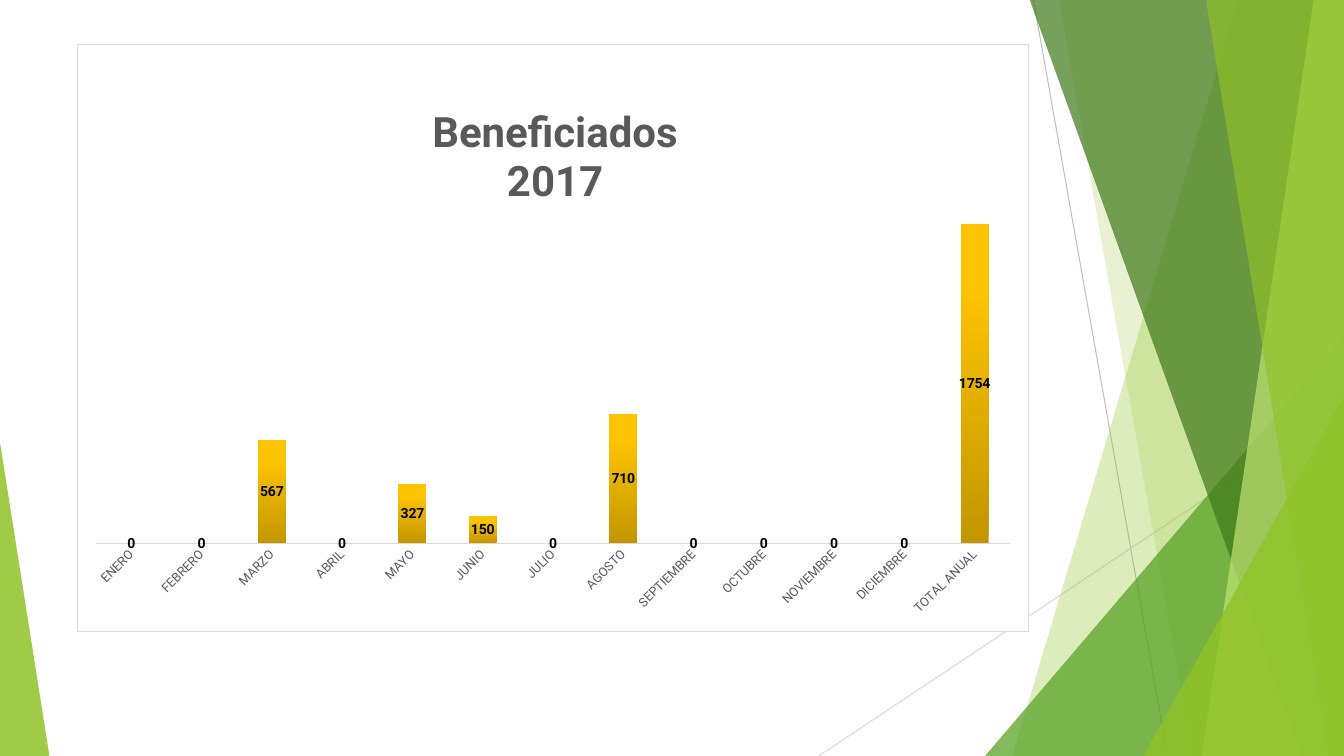
"""Slide with a monthly column chart of beneficiaries beside green facets."""
from dataclasses import dataclass

from lxml import etree
from pptx import Presentation
from pptx.chart.data import CategoryChartData
from pptx.dml.color import RGBColor
from pptx.enum.chart import XL_CHART_TYPE as ChartType, XL_LABEL_POSITION as LabelPosition, XL_TICK_MARK as TickMark
from pptx.enum.shapes import MSO_CONNECTOR as Connector, MSO_SHAPE as Preset
from pptx.oxml import parse_xml
from pptx.oxml.ns import nsdecls, qn
from pptx.util import Inches, Pt


@dataclass(frozen=True)
class Theme:
    font: str = "Roboto"
    lime: str = "90C226"
    green: str = "54A021"
    forest: str = "3F7819"
    pale: str = "C0E474"
    grey: str = "BFBFBF"
    border: str = "D9D9D9"
    white: str = "FFFFFF"
    text: str = "595959"
    label: str = "000000"
    bar_stops: tuple = ((0, "C29600"), (80, "FCC300"), (100, "FDC400"))
    title_size: int = 30
    label_size: int = 10
    axis_size: int = 9


theme = Theme()


def paint(shape, color, opacity):
    """Give a facet a translucent fill without line or shadow."""
    shape.shadow.inherit = False
    shape.fill.solid()
    shape.fill.fore_color.rgb = RGBColor.from_string(color)
    shape.line.fill.background()
    tint = shape.element.spPr.find(qn("a:solidFill"))[0]
    etree.SubElement(tint, qn("a:alpha")).set("val", str(opacity * 1000))


def style(font, size, color, bold=False):
    """Set typeface, size, colour and weight."""
    font.name = theme.font
    font.size = Pt(size)
    font.bold = bold
    font.color.rgb = RGBColor.from_string(color)


deck = Presentation()
deck.slide_width, deck.slide_height = Inches(13.33), Inches(7.5)
page = deck.slides.add_slide(deck.slide_layouts[6])
shapes = page.shapes

for x1, y1, x2, y2, color in (
    (10.25, 0, 11.58, 7.5, theme.grey),
    (13.33, 4.03, 8.12, 7.5, theme.border),
):
    ray = shapes.add_connector(Connector.STRAIGHT, Inches(x1), Inches(y1), Inches(x2), Inches(y2))
    ray.line.color.rgb = RGBColor.from_string(color)
    ray.line.width = Pt(0.75)
    etree.SubElement(ray.element.spPr, qn("a:effectLst"))

bands = [
    (12.28, 10.04, theme.lime, 30),
    (10.5, 11.83, theme.lime, 20),
    (10.21, 12.91, theme.forest, 70),
    (13.03, 11.92, theme.pale, 70),
    (11.96, 13.18, theme.lime, 65),
]
triangles = {
    2: (9.77, 3.33, 3.56, 1, theme.green, 72),
    5: (11.34, 3.93, 1.99, 1, theme.lime, 80),
    6: (0, 4.39, 0.49, 0, theme.lime, 85),
}
for order in range(len(bands) + len(triangles)):
    if order in triangles:
        left, top, width, apex, color, opacity = triangles[order]
        facet = shapes.add_shape(
            Preset.ISOSCELES_TRIANGLE, Inches(left), Inches(top), Inches(width), Inches(7.5 - top))
        facet.adjustments[0] = apex
        paint(facet, color, opacity)
    if order < len(bands):
        top_x, bottom_x, color, opacity = bands[order]
        outline = shapes.build_freeform(Inches(top_x), Inches(-0.01))
        outline.add_line_segments(
            [(Inches(x), Inches(y)) for x, y in ((13.33, -0.01), (13.33, 7.5), (bottom_x, 7.5))])
        paint(outline.convert_to_shape(), color, opacity)

data = CategoryChartData()
data.categories = [
    "ENERO", "FEBRERO", "MARZO", "ABRIL", "MAYO", "JUNIO", "JULIO", "AGOSTO",
    "SEPTIEMBRE", "OCTUBRE", "NOVIEMBRE", "DICIEMBRE", "TOTAL ANUAL",
]
data.add_series("Series 1", [0, 0, 567, 0, 327, 150, 0, 710, 0, 0, 0, 0, 1754])
chart = shapes.add_chart(
    ChartType.COLUMN_STACKED, Inches(0.76), Inches(0.44), Inches(9.45), Inches(5.83), data).chart
style(chart.font, theme.label_size, theme.label)
chart.has_legend = False
chart.has_title = True
title = chart.chart_title
title.include_in_layout = False
heading = title.text_frame
for number, words in enumerate(("Beneficiados", "2017")):
    para = heading.add_paragraph() if number else heading.paragraphs[0]
    span = para.add_run()
    span.text = words
    style(span.font, theme.title_size, theme.text, True)

months = chart.category_axis
months.major_tick_mark = months.minor_tick_mark = TickMark.NONE
months.has_major_gridlines = False
months.format.line.color.rgb = RGBColor.from_string(theme.border)
months.format.line.width = Pt(1)
style(months.tick_labels.font, theme.axis_size, theme.text)
months._element.find(qn("c:txPr")).find(qn("a:bodyPr")).set("rot", "-2700000")
amounts = chart.value_axis
amounts.visible = False
amounts.has_major_gridlines = False
amounts.minimum_scale, amounts.maximum_scale = 0, 2000

plot = chart.plots[0]
plot.vary_by_categories = False
plot.gap_width, plot.overlap = 150, 100
series = plot.series[0]
labels = series.data_labels
labels.show_value = True
labels.position = LabelPosition.CENTER
style(labels.font, theme.label_size, theme.label, True)
stops = "".join(
    f'<a:gs pos="{place * 1000}"><a:srgbClr val="{color}"/></a:gs>' for place, color in theme.bar_stops)
series.format.fill.solid()
bar = series._element.find(qn("c:spPr"))
bar.replace(bar.find(qn("a:solidFill")), parse_xml(
    f'<a:gradFill {nsdecls("a")}><a:gsLst>{stops}</a:gsLst><a:lin ang="16200000" scaled="0"/></a:gradFill>'))

space = chart._chartSpace
space.find(qn("c:chart")).addnext(parse_xml(
    f'<c:spPr {nsdecls("c", "a")}><a:solidFill><a:srgbClr val="{theme.white}"/></a:solidFill>'
    f'<a:ln w="{Pt(0.75)}"><a:solidFill><a:srgbClr val="{theme.border}"/></a:solidFill></a:ln></c:spPr>'))
for owner, target, places in (
    ("c:title", "", {"x": 0.37, "y": 0.1}),
    ("c:plotArea", '<c:layoutTarget val="inner"/>', {"x": 0.02, "y": 0.23, "w": 0.96, "h": 0.62}),
):
    holder = space.find(".//" + qn(owner))
    for layout in holder.findall(qn("c:layout")):
        holder.remove(layout)
    modes = "".join(f'<c:{side}Mode val="edge"/>' for side in "xy")
    values = "".join(f'<c:{side} val="{value}"/>' for side, value in places.items())
    layout = parse_xml(
        f'<c:layout {nsdecls("c")}><c:manualLayout>{target}{modes}{values}</c:manualLayout></c:layout>')
    holder.insert(1 if owner == "c:title" else 0, layout)

deck.save("out.pptx")
